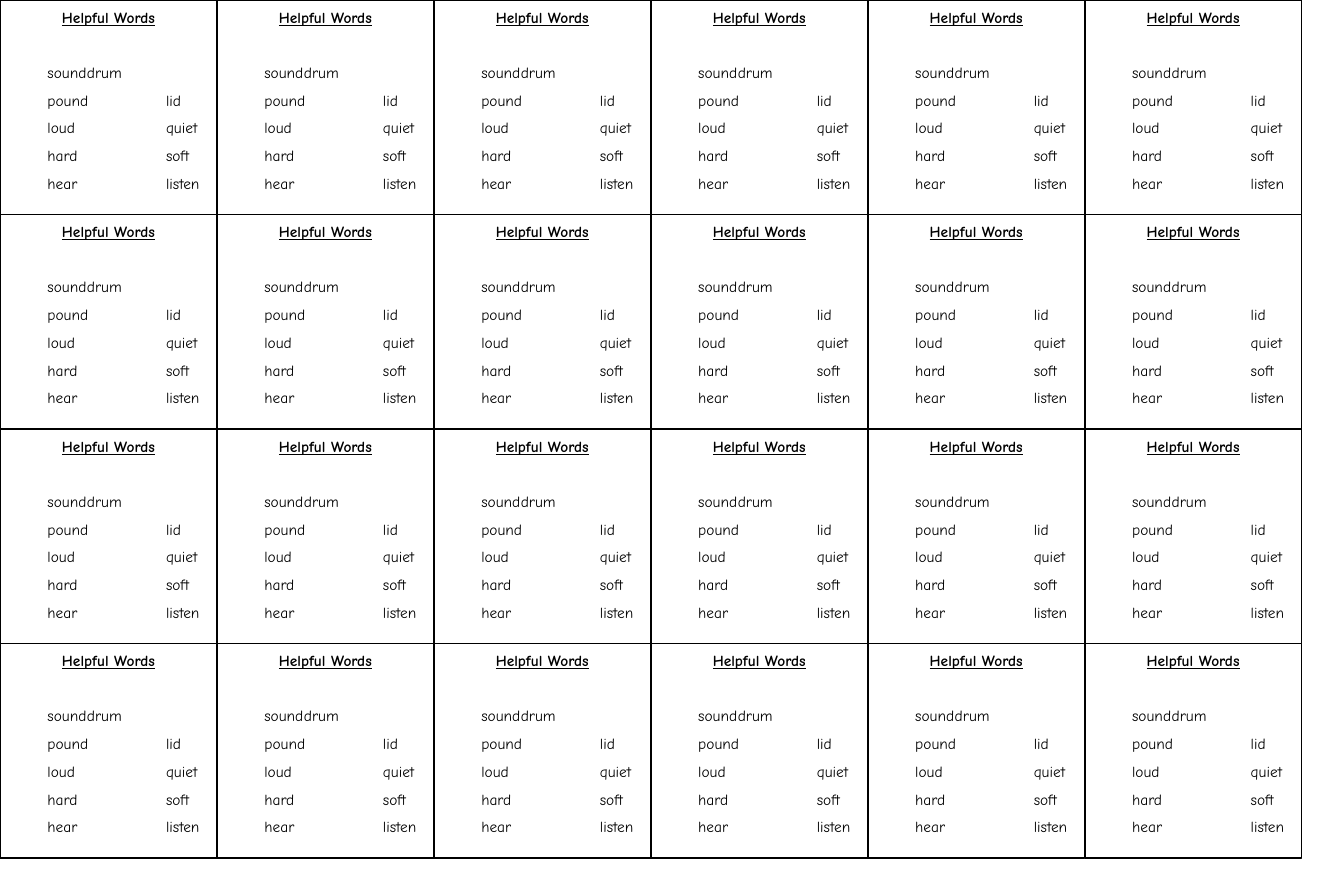
from dataclasses import dataclass
from itertools import product

from pptx import Presentation
from pptx.dml.color import RGBColor
from pptx.enum.shapes import MSO_SHAPE as Shape
from pptx.enum.text import MSO_ANCHOR as Anchor, PP_ALIGN as Align
from pptx.util import Emu, Pt

EMU_PER_PX = 914400 // 500
COLS, ROWS = 6, 4
CARD_W, CARD_H = 1372, 1356
INSET, INDENT, TAB_SIZE = 50, 250, 500
TITLE_GAP = Pt(25)
FONT, SIZE = "Comic Neue", Pt(14)
BLACK, WHITE = "000000", "FFFFFF"


@dataclass(frozen=True)
class WordPair:
    left: str
    right: str
    tabs: int = 2


WORDS = [
    WordPair("sound", "drum", tabs=1),
    WordPair("pound", "lid", tabs=1),
    WordPair("loud", "quiet"),
    WordPair("hard", "soft"),
    WordPair("hear", "listen"),
]


def px(n: int) -> Emu:
    return Emu(n * EMU_PER_PX)


def color(value: str) -> RGBColor:
    return RGBColor.from_string(value)


def set_default_tabs(prs) -> None:
    for part in (prs.element, prs.slide_master.element):
        for style in part.xpath(".//*[@defTabSz]"):
            style.set("defTabSz", str(px(TAB_SIZE)))


def add_run(p, text: str, heading: bool = False) -> None:
    r = p.add_run()
    r.text = text
    r.font.name, r.font.size = FONT, SIZE
    r.font.bold = r.font.underline = heading
    r.font.color.rgb = color(BLACK)


def add_pair(tf, pair: WordPair):
    p = tf.add_paragraph()
    p.alignment = Align.LEFT
    p.line_spacing = 1.5
    add_run(p, pair.left + "\t" * pair.tabs + pair.right)
    # First-line indent, with the tab width
    pPr = p._p.get_or_add_pPr()
    pPr.set("marL", "0")
    pPr.set("indent", str(px(INDENT)))
    pPr.set("defTabSz", str(px(TAB_SIZE)))
    return p


def add_card(s, col: int, row: int) -> None:
    # Frame
    sp = s.shapes.add_shape(Shape.RECTANGLE, px(col * CARD_W), px(row * CARD_H),
                            px(CARD_W), px(CARD_H))
    sp.shadow.inherit = False
    sp.fill.solid()
    sp.fill.fore_color.rgb = color(WHITE)
    sp.line.color.rgb = color(BLACK)
    sp.line.width = Pt(1.5)

    # Heading
    tf = sp.text_frame
    tf.word_wrap = True
    tf.vertical_anchor = Anchor.TOP
    tf.margin_left = tf.margin_right = tf.margin_top = tf.margin_bottom = px(INSET)
    p = tf.paragraphs[0]
    p.alignment = Align.CENTER
    add_run(p, "Helpful Words", heading=True)

    # Word list
    pairs = [add_pair(tf, pair) for pair in WORDS]
    pairs[0].space_before = TITLE_GAP


def main() -> None:
    prs = Presentation()
    prs.slide_width, prs.slide_height = px(8500), px(5500)
    set_default_tabs(prs)
    s = prs.slides.add_slide(prs.slide_layouts[6])
    for row, col in product(range(ROWS), range(COLS)):
        add_card(s, col, row)
    prs.save("out.pptx")


if __name__ == "__main__":
    main()
